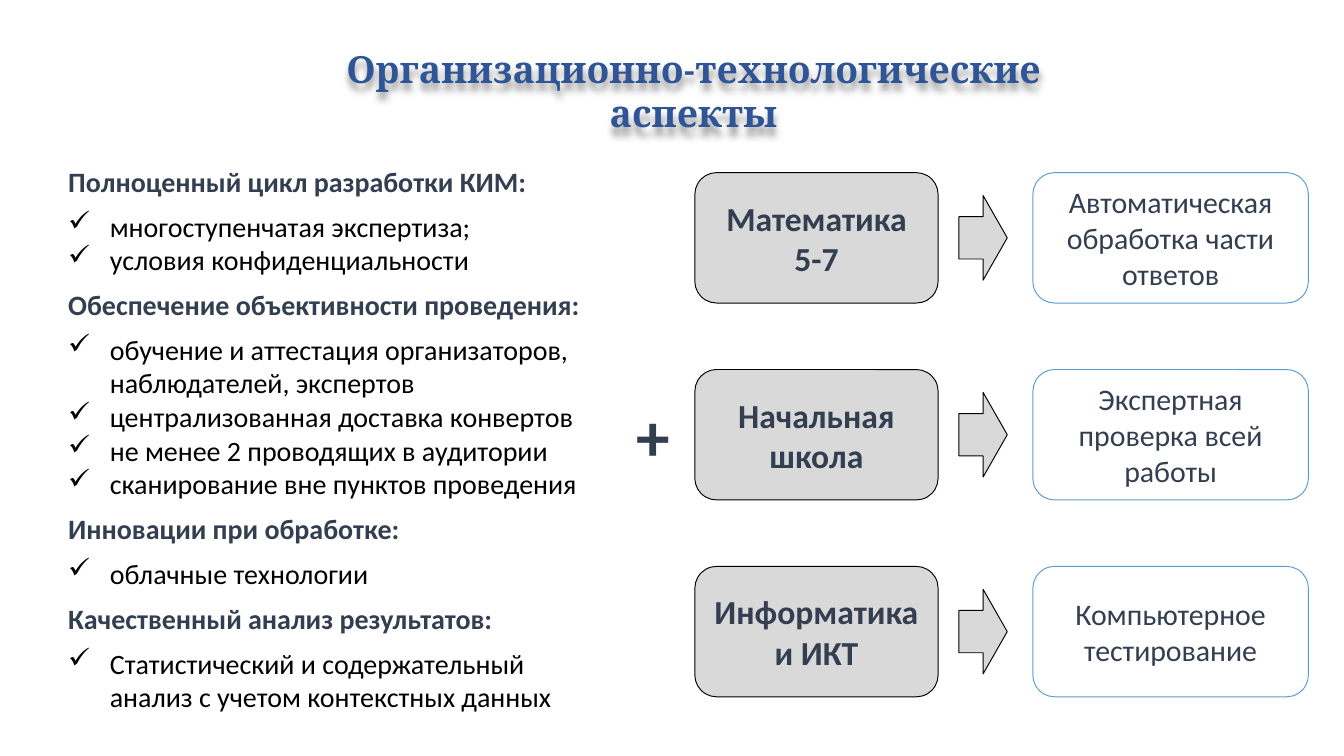
"""Build the slide on organisational and technological aspects."""
from dataclasses import dataclass

from lxml.etree import SubElement
from pptx import Presentation
from pptx.dml.color import RGBColor
from pptx.enum.shapes import MSO_SHAPE
from pptx.enum.text import MSO_ANCHOR, PP_ALIGN
from pptx.oxml import parse_xml
from pptx.oxml.ns import nsdecls, qn
from pptx.util import Emu, Pt

EMU_PER_PX = 4572
INK, BLACK, WHITE = "333F50", "000000", "FFFFFF"
GREY, BLUE, NAVY = "D9D9D9", "5B9BD5", "2F5597"
FIRST_ROW, ROW_STEP, CARD_HEIGHT = 257, 293, 194
ARROW_HEIGHT = 126
BULLET_INDENT = 62


@dataclass(frozen=True)
class Route:
    subject: str
    method: str


@dataclass(frozen=True)
class Topic:
    heading: str
    points: tuple[str, ...]


ROUTES = (
    Route("Математика 5-7", "Автоматическая обработка части ответов"),
    Route("Начальная школа", "Экспертная проверка всей работы"),
    Route("Информатика и ИКТ", "Компьютерное тестирование"),
)
TOPICS = (
    Topic("Полноценный цикл разработки КИМ:",
          ("многоступенчатая экспертиза;", "условия конфиденциальности")),
    Topic("Обеспечение объективности проведения:",
          ("обучение и аттестация организаторов, наблюдателей, экспертов",
           "централизованная доставка конвертов",
           "не менее 2 проводящих в аудитории",
           "сканирование вне пунктов проведения")),
    Topic("Инновации при обработке:", ("облачные технологии",)),
    Topic("Качественный анализ результатов:",
          ("Статистический и содержательный анализ с учетом контекстных данных",)),
)


def px(length: int) -> Emu:
    return Emu(length * EMU_PER_PX)


def color(code: str) -> RGBColor:
    return RGBColor.from_string(code)


def write(para, text: str, *, size: int, ink: str = INK, bold: bool = False,
          font: str = "Calibri", align=PP_ALIGN.CENTER, before: int = 0,
          after: int = 0, bullet: str = "") -> None:
    para.alignment = align
    para.space_before, para.space_after = Pt(before), Pt(after)
    para.line_spacing = 1.0
    span = para.add_run()
    span.text = text
    span.font.size, span.font.name, span.font.bold = Pt(size), font, bold
    span.font.color.rgb = color(ink)
    if bullet:
        properties = para._p.get_or_add_pPr()
        properties.set("marL", str(px(BULLET_INDENT)))
        properties.set("indent", str(px(-BULLET_INDENT)))
        SubElement(properties, qn("a:buChar")).set("char", bullet)


def add_box(slide, left: int, top: int, width: int, height: int, *,
            kind=MSO_SHAPE.ROUNDED_RECTANGLE, fill: str = "", line: str = ""):
    box = slide.shapes.add_shape(kind, px(left), px(top), px(width), px(height))
    box.shadow.inherit = False
    if fill:
        box.fill.solid()
        box.fill.fore_color.rgb = color(fill)
    else:
        box.fill.background()
    if line:
        box.line.color.rgb = color(line)
        box.line.width = Pt(0.5)
    else:
        box.line.fill.background()
    frame = box.text_frame
    frame.word_wrap = True
    frame.vertical_anchor = MSO_ANCHOR.MIDDLE
    return box


def add_title(slide, text: str) -> None:
    title = slide.shapes.title
    title.left, title.top, title.width, title.height = px(402), px(58), px(1260), px(156)
    title.fill.background()
    title.line.fill.background()
    shadow = parse_xml(
        f'<a:effectLst {nsdecls("a")}><a:outerShdw blurRad="50800" dist="50800" '
        'dir="5400000" algn="t" rotWithShape="0"><a:srgbClr val="000000">'
        '<a:alpha val="40000"/></a:srgbClr></a:outerShdw></a:effectLst>')
    title._element.spPr.append(shadow)
    frame = title.text_frame
    frame.word_wrap = True
    frame.vertical_anchor = MSO_ANCHOR.TOP
    write(frame.paragraphs[0], text, size=20, ink=NAVY, bold=True, font="Cambria")


def add_route(slide, route: Route, top: int) -> None:
    subject = add_box(slide, 1034, top, 362, CARD_HEIGHT, fill=GREY, line=BLACK)
    write(subject.text_frame.paragraphs[0], route.subject, size=18, bold=True)
    arrow_top = top + (CARD_HEIGHT - ARROW_HEIGHT) // 2
    add_box(slide, 1427, arrow_top, 72, ARROW_HEIGHT, kind=MSO_SHAPE.RIGHT_ARROW,
            fill=GREY, line=BLACK)
    method = add_box(slide, 1537, top, 410, CARD_HEIGHT, fill=WHITE, line=BLUE)
    write(method.text_frame.paragraphs[0], route.method, size=16)


def add_topics(slide, topics: tuple[Topic, ...]) -> None:
    frame = add_box(slide, 40, 224, 898, 858, fill=WHITE).text_frame
    for index, topic in enumerate(topics):
        para = frame.add_paragraph() if index else frame.paragraphs[0]
        write(para, topic.heading, size=15, bold=True, align=PP_ALIGN.LEFT,
              before=6 if index else 0, after=6)
        for point in topic.points:
            write(frame.add_paragraph(), point, size=15, ink=BLACK,
                  align=PP_ALIGN.LEFT, bullet="✓")


def main() -> None:
    deck = Presentation()
    deck.slide_width, deck.slide_height = px(2000), px(1125)
    page = deck.slides.add_slide(deck.slide_layouts[5])
    add_title(page, "Организационно-технологические аспекты")
    for index, route in enumerate(ROUTES):
        add_route(page, route, FIRST_ROW + index * ROW_STEP)
    add_topics(page, TOPICS)
    plus = add_box(page, 912, FIRST_ROW + ROW_STEP, 120, CARD_HEIGHT)
    write(plus.text_frame.paragraphs[0], "+", size=36, bold=True)
    deck.save("out.pptx")


if __name__ == "__main__":
    main()
